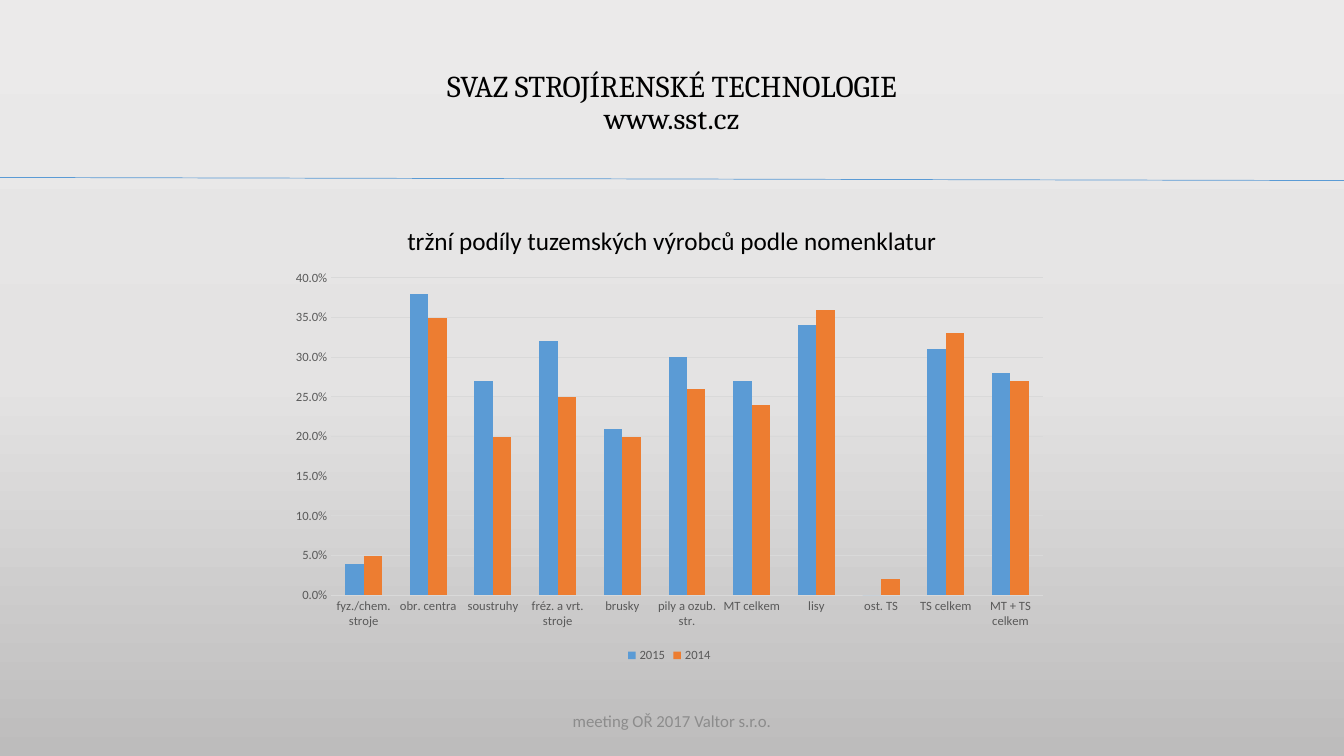
from dataclasses import dataclass

from lxml import etree
from pptx import Presentation
from pptx import util as u
from pptx.chart import data as chart_data
from pptx.dml.color import RGBColor
from pptx.enum import chart as chart_enum
from pptx.enum import shapes, text
from pptx.oxml.ns import qn

EMU_PER_PX = 9525
SLIDE_WIDTH, SLIDE_HEIGHT = 1280, 720
COLOURS = {
    "black": "000000",
    "label": "595959",
    "footer": "8C8C8C",
    "grid": "D9D9D9",
    "blue": "5B9BD5",
    "orange": "ED7D31",
}
BACKGROUND_STOPS = {0: "EBEAEA", 50: "E4E3E3", 100: "BDBCBC"}


@dataclass(frozen=True)
class Box:
    left: int
    top: int
    width: int
    height: int

    def emu(self) -> tuple[u.Emu, ...]:
        return tuple(px(v) for v in (self.left, self.top, self.width, self.height))


@dataclass(frozen=True)
class YearSeries:
    year: str
    colour: str
    shares: tuple[float, ...]


CATEGORIES = (
    "fyz./chem. stroje", "obr. centra", "soustruhy", "fréz. a vrt. stroje",
    "brusky", "pily a ozub. str.", "MT celkem", "lisy", "ost. TS",
    "TS celkem", "MT + TS celkem",
)
YEARS = (
    YearSeries("2015", "blue", (0.04, 0.38, 0.27, 0.32, 0.21, 0.3,
                                0.27, 0.34, 0, 0.31, 0.28)),
    YearSeries("2014", "orange", (0.05, 0.35, 0.2, 0.25, 0.2, 0.26,
                                  0.24, 0.36, 0.02, 0.33, 0.27)),
)


def px(value: int) -> u.Emu:
    return u.Emu(value * EMU_PER_PX)


def rgb(name: str) -> RGBColor:
    return RGBColor.from_string(COLOURS[name])


def set_font(font, size: float, colour: str, name: str = "Calibri") -> None:
    font.size = u.Pt(size)
    font.name = name
    font.color.rgb = rgb(colour)


def paint_background(slide) -> None:
    fill = slide.background.fill
    fill.gradient()
    fill.gradient_angle = 270  # counter-clockwise: runs from top to bottom
    stops = next(slide.background._cSld.iter(qn("a:gsLst")))
    for stop in list(stops):
        stops.remove(stop)
    for percent, colour in BACKGROUND_STOPS.items():
        stop = etree.SubElement(stops, qn("a:gs"), pos=str(percent * 1000))
        etree.SubElement(stop, qn("a:srgbClr"), val=colour)


def add_text(slide, content: str, box: Box, *, size: float, colour: str = "black",
             font: str = "Calibri", anchor=text.MSO_ANCHOR.TOP,
             line_spacing: float = 1.0) -> None:
    frame = slide.shapes.add_textbox(*box.emu()).text_frame
    frame.word_wrap = True
    frame.vertical_anchor = anchor
    frame.margin_top = frame.margin_bottom = px(5)
    paragraph = frame.paragraphs[0]
    paragraph.text = content
    paragraph.alignment = text.PP_ALIGN.CENTER
    paragraph.line_spacing = line_spacing
    for run in paragraph.runs:
        set_font(run.font, size, colour, font)


def add_divider(slide) -> None:
    divider = slide.shapes.add_connector(
        shapes.MSO_CONNECTOR.STRAIGHT, px(0), px(169), px(SLIDE_WIDTH), px(172))
    divider.line.color.rgb = rgb("blue")
    divider.line.width = u.Pt(0.5)
    etree.SubElement(divider._element.spPr, qn("a:effectLst"))


def style_axis(axis) -> None:
    axis.major_tick_mark = axis.minor_tick_mark = chart_enum.XL_TICK_MARK.NONE
    axis.format.line.fill.background()
    set_font(axis.tick_labels.font, 9, "label")


def add_share_chart(slide, box: Box) -> None:
    shares = chart_data.CategoryChartData(number_format="0.0%")
    shares.categories = CATEGORIES
    for entry in YEARS:
        shares.add_series(entry.year, entry.shares)
    chart = slide.shapes.add_chart(
        chart_enum.XL_CHART_TYPE.COLUMN_CLUSTERED, *box.emu(), shares).chart
    chart.has_title = False
    set_font(chart.font, 10, "black")

    plot = chart.plots[0]
    plot.gap_width = 150
    plot.overlap = 0
    plot.vary_by_categories = False
    for series, entry in zip(plot.series, YEARS):
        series.format.fill.solid()
        series.format.fill.fore_color.rgb = rgb(entry.colour)

    style_axis(chart.category_axis)
    value_axis = chart.value_axis
    style_axis(value_axis)
    value_axis.minimum_scale, value_axis.maximum_scale = 0, 0.4
    value_axis.major_unit = 0.05
    value_axis.tick_labels.number_format = "0.0%"
    value_axis.tick_labels.number_format_is_linked = False
    value_axis.has_major_gridlines = True
    grid = value_axis.major_gridlines.format.line
    grid.color.rgb = rgb("grid")
    grid.width = u.Pt(0.75)

    chart.has_legend = True
    chart.legend.position = chart_enum.XL_LEGEND_POSITION.BOTTOM
    chart.legend.include_in_layout = False
    set_font(chart.legend.font, 9, "label")


def main() -> None:
    presentation = Presentation()
    presentation.slide_width = px(SLIDE_WIDTH)
    presentation.slide_height = px(SLIDE_HEIGHT)
    slide = presentation.slides.add_slide(presentation.slide_layouts[6])
    paint_background(slide)
    add_text(slide, "SVAZ STROJÍRENSKÉ TECHNOLOGIE\vwww.sst.cz",
             Box(160, 59, 960, 76), size=21.6, font="Cambria",
             anchor=text.MSO_ANCHOR.BOTTOM, line_spacing=0.9)
    add_text(slide, "tržní podíly tuzemských výrobců podle nomenklatur",
             Box(160, 213, 960, 38), size=18, line_spacing=0.9)
    add_text(slide, "meeting OŘ 2017 Valtor s.r.o.", Box(424, 667, 432, 38),
             size=12, colour="footer", anchor=text.MSO_ANCHOR.MIDDLE)
    add_divider(slide)
    add_share_chart(slide, Box(267, 250, 741, 385))
    presentation.save("out.pptx")


if __name__ == "__main__":
    main()
